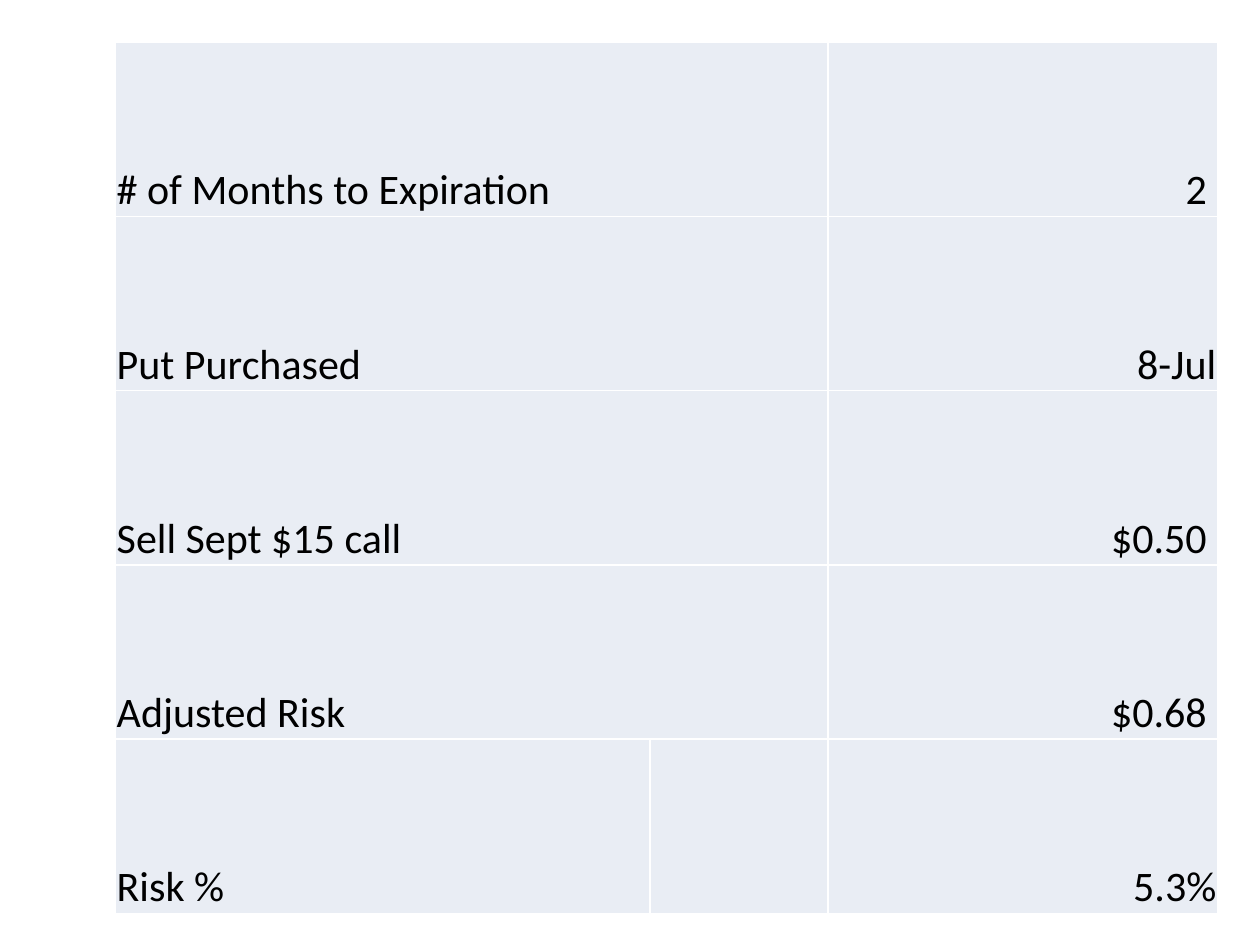
"""Build a slide with a table of option trade risk figures."""
from lxml import etree
from pptx import Presentation
from pptx import util as u
from pptx.dml import color
from pptx.enum import text
from pptx.oxml import ns

COLORS = {"cell": "E9EDF4", "border": "FFFFFF", "text": "000000"}
CELL = {
    "margin_left": u.Pt(0.72),
    "margin_right": u.Pt(0.72),
    "margin_top": u.Pt(0.72),
    "margin_bottom": u.Pt(0),
    "vertical_anchor": text.MSO_ANCHOR.BOTTOM,
}
FONT = {"name": "Calibri", "size": u.Pt(24), "bold": False}
ROWS = [
    ("# of Months to Expiration", "2 "),
    ("Put Purchased", "8-Jul"),
    ("Sell Sept $15 call", "$0.50 "),
    ("Adjusted Risk", "$0.68 "),
    ("Risk %", "5.3%"),
]
COL_WIDTHS = [305.4, 101.8, 222.6]
ROW_HEIGHT = 99.6


def add_borders(cell):
    """Draw a thin line on each side of the cell."""
    tc_pr = cell._tc.get_or_add_tcPr()
    for i, side in enumerate(("lnL", "lnR", "lnT", "lnB")):
        ln = etree.Element(ns.qn(f"a:{side}"), w=str(u.Pt(1)))
        fill = etree.SubElement(ln, ns.qn("a:solidFill"))
        etree.SubElement(fill, ns.qn("a:srgbClr"), val=COLORS["border"])
        tc_pr.insert(i, ln)


prs = Presentation()
prs.slide_width, prs.slide_height = u.Pt(720), u.Pt(540)
s = prs.slides.add_slide(prs.slide_layouts[6])

sp = s.shapes.add_table(
    len(ROWS), len(COL_WIDTHS), u.Pt(66), u.Pt(24),
    u.Pt(sum(COL_WIDTHS)), u.Pt(ROW_HEIGHT * len(ROWS)),
)
table = sp.table
table.first_row = table.horz_banding = False
for col, width in zip(table.columns, COL_WIDTHS):
    col.width = u.Pt(width)

for i, (label, value) in enumerate(ROWS):
    table.rows[i].height = u.Pt(ROW_HEIGHT)
    if i < len(ROWS) - 1:
        table.cell(i, 0).merge(table.cell(i, 1))
    for j, words in enumerate((label, "", value)):
        cell = table.cell(i, j)
        for name, setting in CELL.items():
            setattr(cell, name, setting)
        cell.fill.solid()
        cell.fill.fore_color.rgb = color.RGBColor.from_string(COLORS["cell"])
        add_borders(cell)
        if words:
            p = cell.text_frame.paragraphs[0]
            p.alignment = text.PP_ALIGN.RIGHT if j == 2 else text.PP_ALIGN.LEFT
            r = p.add_run()
            r.text = words
            for name, setting in FONT.items():
                setattr(r.font, name, setting)
            r.font.color.rgb = color.RGBColor.from_string(COLORS["text"])

prs.save("out.pptx")
